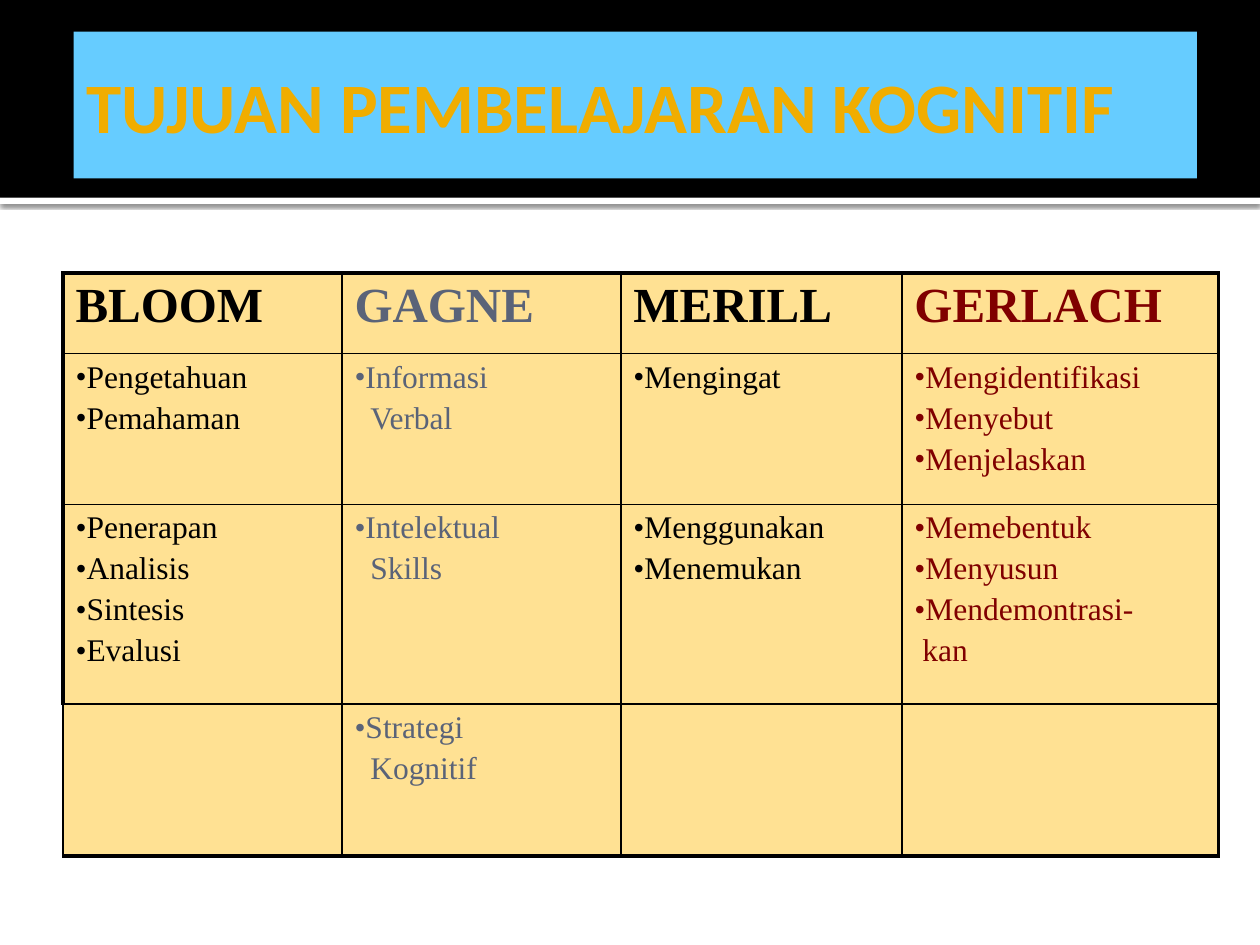
"""Build a slide comparing cognitive learning objectives from four authors."""
from lxml.etree import SubElement
from pptx import Presentation
from pptx.dml.color import RGBColor
from pptx.enum.shapes import MSO_SHAPE
from pptx.enum.text import MSO_ANCHOR, MSO_AUTO_SIZE, PP_ALIGN
from pptx.oxml import parse_xml
from pptx.oxml.ns import nsdecls, qn
from pptx.util import Pt

BLACK, WHITE, GREY, MAROON = "000000", "FFFFFF", "5A6378", "800000"
AUTHORS = [("BLOOM", BLACK), ("GAGNE", GREY), ("MERILL", BLACK), ("GERLACH", MAROON)]
OBJECTIVES = [
    [["Pengetahuan", "Pemahaman"], ["Informasi", (9, "Verbal")],
     ["Mengingat"], ["Mengidentifikasi", "Menyebut", "Menjelaskan"]],
    [["Penerapan", "Analisis", "Sintesis", "Evalusi"], ["Intelektual", (9, "Skills")],
     ["Menggunakan", "Menemukan"],
     ["Memebentuk", "Menyusun", "Mendemontrasi-", (4.5, "kan")]],
    [[], ["Strategi", (9, "Kognitif")], [], []],
]
COLUMN_WIDTHS = [159.4, 159.4, 160.6, 180.8]
ROW_HEIGHTS = [46.1, 86.2, 113.9, 87.1]


def rgb(hex_string):
    return RGBColor.from_string(hex_string)


class SlideBuilder:
    table_font, cell_fill = "Times New Roman", "FFE193"
    thin, thick = 1, 2.25

    def __init__(self, slide):
        self.slide = slide

    def style_text(self, paragraph, text, name, size, color, bold):
        run = paragraph.add_run()
        run.text = text
        for font in (paragraph.font, run.font):
            font.name, font.size, font.bold = name, Pt(size), bold
            font.color.rgb = rgb(color)

    def band(self, top, height, color):
        strip = self.slide.shapes.add_shape(
            MSO_SHAPE.RECTANGLE, Pt(0), Pt(top), Pt(720), Pt(height))
        strip.fill.solid()
        strip.fill.fore_color.rgb = rgb(color)
        strip.line.fill.background()
        strip.shadow.inherit = False
        self.slide.shapes.title.element.addprevious(strip.element)
        return strip

    def drop_shadow(self, strip):
        effects = strip.element.spPr.find(qn("a:effectLst"))
        effects.append(parse_xml(
            f'<a:outerShdw {nsdecls("a")} blurRad="{Pt(2.5)}" dist="{Pt(0.8)}" '
            'dir="5400000" algn="t" rotWithShape="0"><a:srgbClr val="000000">'
            '<a:alpha val="60000"/></a:srgbClr></a:outerShdw>'))

    def title(self, text):
        heading = self.slide.shapes.title
        heading.left, heading.top, heading.width, heading.height = (
            Pt(42), Pt(18), Pt(642), Pt(84))
        heading.fill.solid()
        heading.fill.fore_color.rgb = rgb("66CCFF")
        frame = heading.text_frame
        frame.auto_size, frame.word_wrap = MSO_AUTO_SIZE.NONE, True
        frame.vertical_anchor = MSO_ANCHOR.MIDDLE
        frame.margin_left = Pt(7.2)
        frame.margin_right = frame.margin_top = frame.margin_bottom = Pt(3.6)
        frame.paragraphs[0].alignment = PP_ALIGN.LEFT
        self.style_text(frame.paragraphs[0], text, "Calibri", 40.5, "F0AD00", True)

    def cell_line(self, paragraph, text, size, color, bold=False, bullet=False, indent=0):
        paragraph.space_before = Pt(3.5)
        properties = paragraph._p.get_or_add_pPr()
        properties.set("marL", str(Pt(indent)))
        properties.set("indent", "0")
        if bullet:
            SubElement(properties, qn("a:buFont")).set("typeface", self.table_font)
            SubElement(properties, qn("a:buChar")).set("char", "•")
        self.style_text(paragraph, text, self.table_font, size, color, bold)

    def cell_style(self, cell, row, column):
        last_row, last_column = len(ROW_HEIGHTS) - 1, len(COLUMN_WIDTHS) - 1
        heavy_sides = {"L": column == 0 and row < last_row, "R": column == last_column,
                       "T": row == 0, "B": row == last_row}
        properties = cell._tc.get_or_add_tcPr()
        for side, heavy in heavy_sides.items():
            width = Pt(self.thick if heavy else self.thin)
            properties.append(parse_xml(
                f'<a:ln{side} {nsdecls("a")} w="{width}"><a:solidFill>'
                f'<a:srgbClr val="{BLACK}"/></a:solidFill></a:ln{side}>'))
        cell.fill.solid()
        cell.fill.fore_color.rgb = rgb(self.cell_fill)

    def objectives_table(self, left, top):
        table = self.slide.shapes.add_table(
            len(ROW_HEIGHTS), len(COLUMN_WIDTHS), Pt(left), Pt(top),
            Pt(sum(COLUMN_WIDTHS)), Pt(sum(ROW_HEIGHTS))).table
        table.first_row = table.horz_banding = False
        for column, width in zip(table.columns, COLUMN_WIDTHS):
            column.width = Pt(width)
        for row, height in zip(table.rows, ROW_HEIGHTS):
            row.height = Pt(height)
        for column, (author, color) in enumerate(AUTHORS):
            for row in range(len(ROW_HEIGHTS)):
                self.cell_style(table.cell(row, column), row, column)
            self.cell_line(table.cell(0, column).text_frame.paragraphs[0],
                           author, 28, color, bold=True)
            for row, groups in enumerate(OBJECTIVES, 1):
                frame = table.cell(row, column).text_frame
                for number, item in enumerate(groups[column]):
                    paragraph = frame.add_paragraph() if number else frame.paragraphs[0]
                    bullet = isinstance(item, str)
                    indent, text = (0, item) if bullet else item
                    self.cell_line(paragraph, text, 18, color, bullet=bullet, indent=indent)


def main():
    presentation = Presentation()
    presentation.slide_width, presentation.slide_height = Pt(720), Pt(540)
    builder = SlideBuilder(presentation.slides.add_slide(presentation.slide_layouts[5]))
    builder.drop_shadow(builder.band(113, 3.6, WHITE))
    builder.band(0, 113, BLACK)
    builder.title("TUJUAN PEMBELAJARAN KOGNITIF")
    builder.objectives_table(36, 156)
    presentation.save("out.pptx")


if __name__ == "__main__":
    main()
